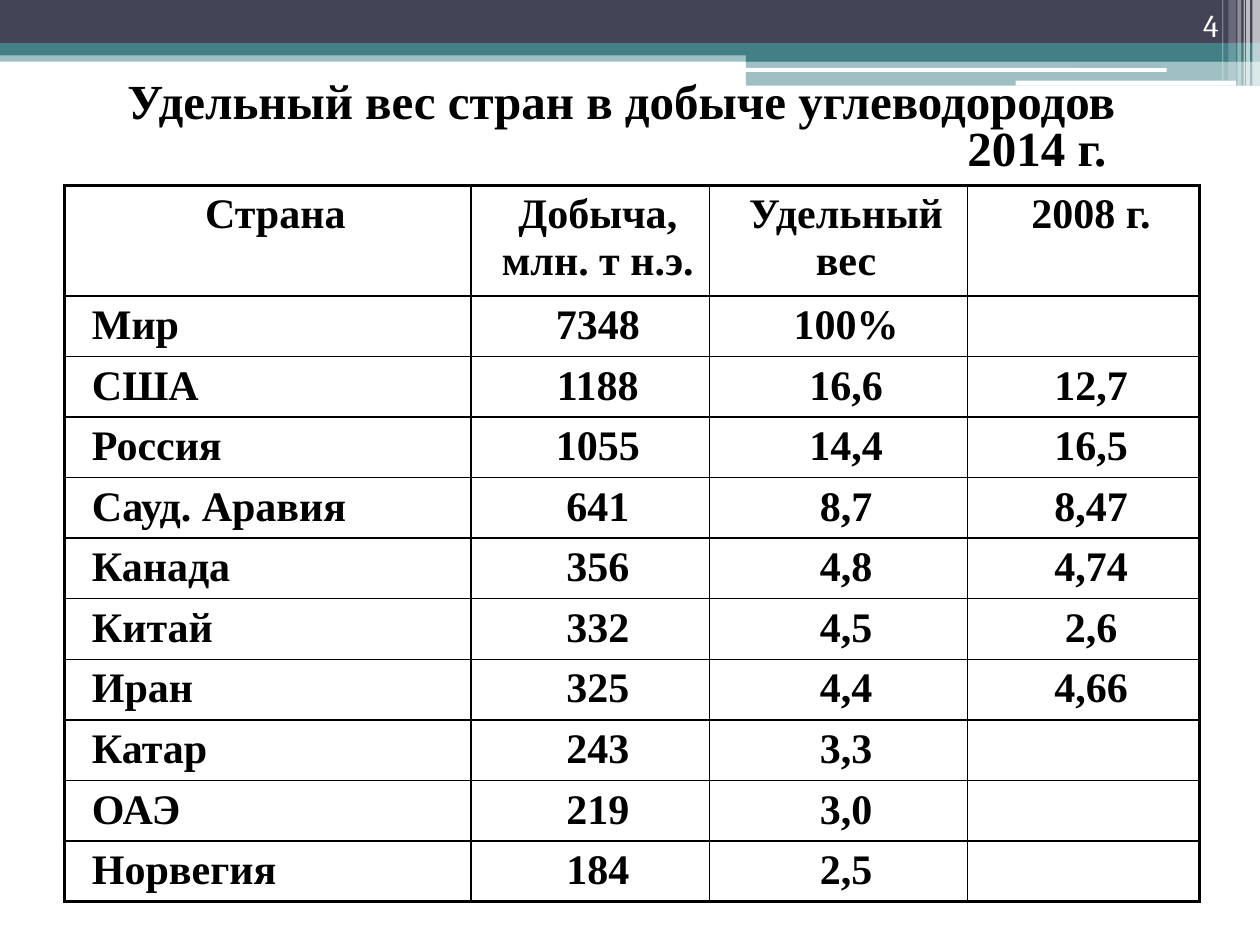
from lxml import etree
from pptx import Presentation
from pptx.dml.color import RGBColor
from pptx.enum.shapes import MSO_SHAPE
from pptx.enum.text import MSO_ANCHOR, PP_ALIGN
from pptx.oxml.ns import qn
from pptx.util import Inches, Pt

RECT, ROUNDED = MSO_SHAPE.RECTANGLE, MSO_SHAPE.ROUNDED_RECTANGLE
LEFT, CENTER, RIGHT = PP_ALIGN.LEFT, PP_ALIGN.CENTER, PP_ALIGN.RIGHT
MIDDLE, BOTTOM = MSO_ANCHOR.MIDDLE, MSO_ANCHOR.BOTTOM
WHITE, BLACK, NAVY, TEAL = "FFFFFF", "000000", "424456", "438086"


def color(value):
    return RGBColor.from_string(value)


class PageBuilder:
    body_font, number_font = "Times New Roman", "Cambria"
    thin, thick = 1, 2.25

    def __init__(self, page):
        self.page = page

    def bar(self, left, top, width, height, fill, opacity=100, kind=RECT):
        shape = self.page.shapes.add_shape(
            kind, Inches(left), Inches(top), Inches(width), Inches(height))
        shape.shadow.inherit = False
        shape.line.fill.background()
        shape.fill.solid()
        shape.fill.fore_color.rgb = color(fill)
        if opacity < 100:
            tint = shape._element.spPr.find(".//" + qn("a:srgbClr"))
            etree.SubElement(tint, qn("a:alpha"), val=str(opacity * 1000))

    def add_text(self, para, text, size, align, indent=0, font=None, fill=BLACK, bold=True):
        para.alignment = align
        if indent:
            props = para._p.get_or_add_pPr()
            props.set("marL", str(Inches(indent)))
            props.set("indent", "0")
        span = para.add_run()
        span.text = text
        for name, value in {"size": Pt(size), "name": font or self.body_font,
                            "bold": bold}.items():
            setattr(span.font, name, value)
        span.font.color.rgb = color(fill)

    def text_box(self, left, top, width, height, anchor):
        box = self.page.shapes.add_textbox(
            Inches(left), Inches(top), Inches(width), Inches(height))
        box.text_frame.word_wrap = True
        box.text_frame.vertical_anchor = anchor
        return box.text_frame

    def borders(self, cell, weights):
        props = cell._tc.get_or_add_tcPr()
        for position, (side, weight) in enumerate(weights.items()):
            line = etree.Element(qn("a:ln" + side), w=str(Pt(weight)))
            fill = etree.SubElement(line, qn("a:solidFill"))
            etree.SubElement(fill, qn("a:srgbClr"), val=BLACK)
            props.insert(position, line)

    def table(self, left, top, widths, heights, rows):
        frame = self.page.shapes.add_table(
            len(rows), len(widths), Inches(left), Inches(top),
            Inches(sum(widths)), Inches(sum(heights)))
        table = frame.table
        table.first_row = table.horz_banding = False
        for column, width in zip(table.columns, widths):
            column.width = Inches(width)
        last_row, last_column = len(rows) - 1, len(widths) - 1
        for r, (row, height) in enumerate(zip(rows, heights)):
            table.rows[r].height = Inches(height)
            for c, text in enumerate(row):
                cell = table.cell(r, c)
                cell.fill.background()
                cell.margin_bottom = Inches(0.03)
                edges = {"L": c == 0, "R": c == last_column,
                         "T": r == 0, "B": r == last_row}
                self.borders(cell, {side: self.thick if outer else self.thin
                                    for side, outer in edges.items()})
                if text:
                    para = cell.text_frame.paragraphs[0]
                    para.space_before = Pt(3)
                    align = LEFT if c == 0 and r > 0 else CENTER
                    self.add_text(para, text, 24, align, indent=0.12)


def main():
    deck = Presentation()
    deck.slide_width, deck.slide_height = Inches(10), Inches(7.5)
    builder = PageBuilder(deck.slides.add_slide(deck.slide_layouts[6]))

    # Header bands
    for band in [
        (0, 0.4, 10, 0.09, TEAL, 50),
        (0, 0, 10, 0.34, NAVY),
        (0, 0.34, 10, 0.1, TEAL),
        (5.92, 0.39, 4.08, 0.1, TEAL),
        (5.92, 0.48, 4.08, 0.2, TEAL, 50),
        (5.91, 0.54, 3.35, 0.03, WHITE, 100, ROUNDED),
        (8.06, 0.64, 1.75, 0.04, WHITE, 100, ROUNDED),
    ]:
        builder.bar(*band)

    # Translucent stripes in the corner
    for left, width, height, opacity in [
        (9.94, 0.06, 0.68, 65), (9.89, 0.03, 0.68, 65), (9.87, 0.01, 0.68, 60),
        (9.82, 0.03, 0.68, 40), (9.75, 0.06, 0.64, 20), (9.7, 0.01, 0.64, 30),
    ]:
        builder.bar(left, 0, width, height, WHITE, opacity)

    # Page number
    number = builder.text_box(8.94, 0, 0.83, 0.4, BOTTOM)
    builder.add_text(number.paragraphs[0], "4", 18, RIGHT,
                     font=builder.number_font, fill=WHITE, bold=False)

    # Title, with the year set off to the right
    title = builder.text_box(0.43, 0.44, 9, 1.17, MIDDLE)
    heading, year = title.paragraphs[0], title.add_paragraph()
    heading.line_spacing = year.line_spacing = 0.8
    builder.add_text(heading, "Удельный вес стран в добыче углеводородов", 28, CENTER)
    builder.add_text(year, "2014 г.", 28, CENTER, indent=6.6)

    # Production table
    rows = [
        ("Страна", "Добыча, млн. т н.э.", "Удельный вес", "2008 г."),
        ("Мир", "7348", "100%", ""),
        ("США", "1188", "16,6", "12,7"),
        ("Россия", "1055", "14,4", "16,5"),
        ("Сауд. Аравия", "641", "8,7", "8,47"),
        ("Канада", "356", "4,8", "4,74"),
        ("Китай", "332", "4,5", "2,6"),
        ("Иран", "325", "4,4", "4,66"),
        ("Катар", "243", "3,3", ""),
        ("ОАЭ", "219", "3,0", ""),
        ("Норвегия", "184", "2,5", ""),
    ]
    heights = [0.84] + [0.47] * (len(rows) - 1)
    builder.table(0.51, 1.47, [3.23, 1.89, 2.05, 1.84], heights, rows)

    deck.save("out.pptx")


if __name__ == "__main__":
    main()
